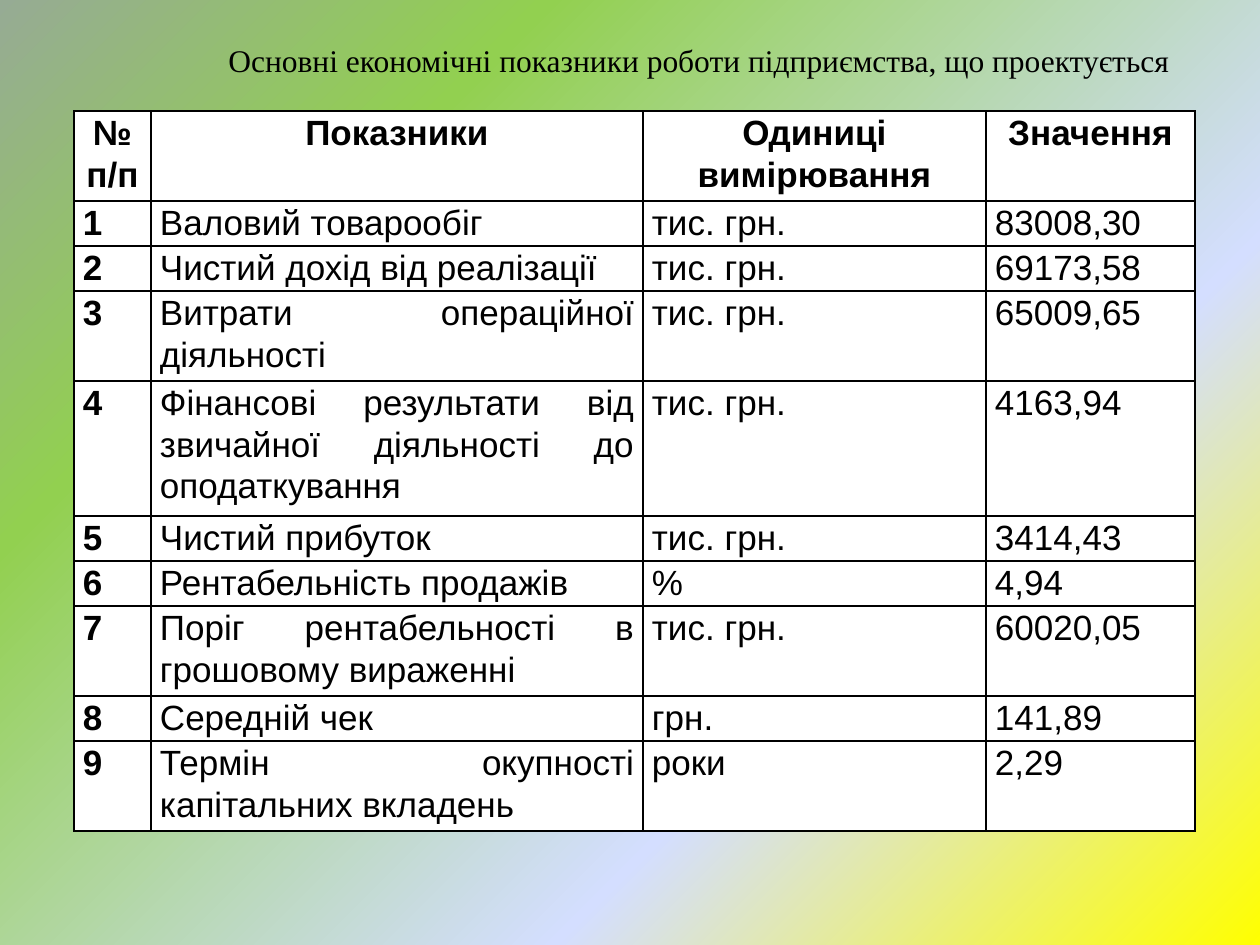
from pptx import Presentation
from pptx.dml.color import RGBColor
from pptx.enum.text import MSO_ANCHOR, MSO_AUTO_SIZE, PP_ALIGN
from pptx.oxml import parse_xml
from pptx.oxml.ns import nsdecls
from pptx.util import Pt

PX = 914400 // 126
COLORS = {"ink": "000000", "paper": "FFFFFF"}
STOPS = [(0, "FFFF00"), (32, "D4DEFF"), (75, "92D050"), (100, "96AB94")]

TITLE = "Основні економічні показники роботи підприємства, що проектується"
TITLE_BOX = (154, 16, 1042, 64)
INDENT = 62

HEAD = ("№ п/п", "Показники", "Одиниці вимірювання", "Значення")
# name, unit, value, lines of text
ROWS = [
    ("Валовий товарообіг", "тис. грн.", "83008,30", 1),
    ("Чистий дохід від реалізації", "тис. грн.", "69173,58", 1),
    ("Витрати операційної діяльності", "тис. грн.", "65009,65", 2),
    ("Фінансові результати від звичайної діяльності до оподаткування",
     "тис. грн.", "4163,94", 3),
    ("Чистий прибуток", "тис. грн.", "3414,43", 1),
    ("Рентабельність продажів", "%", "4,94", 1),
    ("Поріг рентабельності в грошовому вираженні", "тис. грн.", "60020,05", 2),
    ("Середній чек", "грн.", "141,89", 1),
    ("Термін окупності капітальних вкладень", "роки", "2,29", 2),
]
LEFT, TOP, LINE = 74, 111, 45
HEAD_LINES = 2
COLS = (77, 492, 343, 209)
ALIGNS = (PP_ALIGN.JUSTIFY, PP_ALIGN.JUSTIFY, PP_ALIGN.JUSTIFY, PP_ALIGN.LEFT)
PAD = 9


def paint(slide):
    """Fill the background with rings spreading from the lower right corner."""
    stops = "".join(
        f'<a:gs pos="{pos * 1000}"><a:srgbClr val="{color}"/></a:gs>'
        for pos, color in STOPS)
    slide.element.cSld.insert(0, parse_xml(
        f'<p:bg {nsdecls("p", "a")}><p:bgPr><a:gradFill rotWithShape="1">'
        f'<a:gsLst>{stops}</a:gsLst><a:path path="circle">'
        '<a:fillToRect l="100000" t="100000"/></a:path></a:gradFill>'
        '<a:effectLst/></p:bgPr></p:bg>'))


def write(frame, text, font, size, align, gap, bold=False):
    para = frame.paragraphs[0]
    para.alignment = align
    para.line_spacing = gap
    para.space_after = Pt(8)
    run = para.add_run()
    run.text = text
    run.font.name = font
    run.font.size = Pt(size)
    run.font.bold = bold
    run.font.color.rgb = RGBColor.from_string(COLORS["ink"])
    return para


def frame_cell(cell):
    """Draw the four borders, then the fill that must follow them."""
    props = cell._tc.get_or_add_tcPr()
    for side in "LRTB":
        props.append(parse_xml(
            f'<a:ln{side} {nsdecls("a")} w="{Pt(1)}"><a:solidFill>'
            f'<a:srgbClr val="{COLORS["ink"]}"/></a:solidFill></a:ln{side}>'))
    cell.fill.solid()
    cell.fill.fore_color.rgb = RGBColor.from_string(COLORS["paper"])


def add_title(slide):
    box = slide.shapes.add_textbox(*(n * PX for n in TITLE_BOX))
    frame = box.text_frame
    frame.word_wrap = True
    frame.auto_size = MSO_AUTO_SIZE.SHAPE_TO_FIT_TEXT
    para = write(frame, TITLE, "Times New Roman", 18, PP_ALIGN.JUSTIFY, 1.5)
    para._p.get_or_add_pPr().set("indent", str(INDENT * PX))


def add_grid(slide):
    lines = [HEAD_LINES] + [row[-1] for row in ROWS]
    cells = [HEAD] + [(str(n), *row[:3]) for n, row in enumerate(ROWS, 1)]
    grid = slide.shapes.add_table(
        len(cells), len(COLS), LEFT * PX, TOP * PX,
        sum(COLS) * PX, sum(lines) * LINE * PX).table
    for col, width in zip(grid.columns, COLS):
        col.width = width * PX
    for r, texts in enumerate(cells):
        grid.rows[r].height = lines[r] * LINE * PX
        for c, text in enumerate(texts):
            cell = grid.cell(r, c)
            cell.margin_left = cell.margin_right = PAD * PX
            cell.margin_top = cell.margin_bottom = 0
            cell.vertical_anchor = MSO_ANCHOR.TOP
            frame_cell(cell)
            align = PP_ALIGN.CENTER if r == 0 else ALIGNS[c]
            write(cell.text_frame, text, "Arial", 20, align, 1.07,
                  bold=r == 0 or c == 0)


def main():
    deck = Presentation()
    deck.slide_width, deck.slide_height = 1260 * PX, 945 * PX
    slide = deck.slides.add_slide(deck.slide_layouts[6])
    paint(slide)
    add_title(slide)
    add_grid(slide)
    deck.save("out.pptx")


if __name__ == "__main__":
    main()
